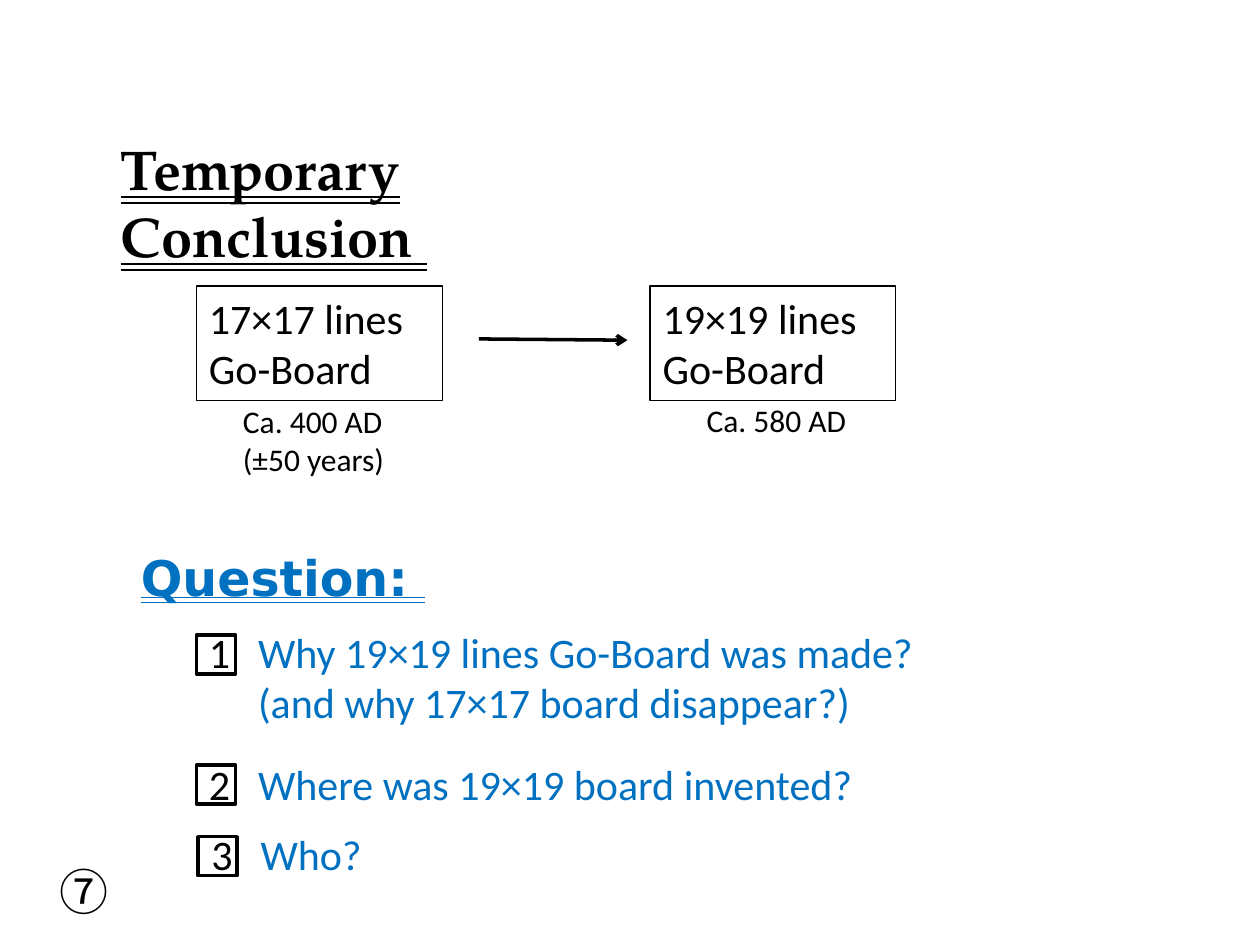
from dataclasses import dataclass

from lxml.etree import SubElement
from pptx import Presentation
from pptx.dml.color import RGBColor
from pptx.enum.shapes import MSO_CONNECTOR, MSO_SHAPE
from pptx.enum.text import MSO_ANCHOR, MSO_UNDERLINE, PP_ALIGN
from pptx.oxml.ns import qn
from pptx.util import Inches, Pt

COLORS = {"ink": "000000", "question": "0070C0"}
COLS, ROWS = 100, 75

prs = Presentation()
prs.slide_width, prs.slide_height = Inches(10), Inches(7.5)
s = prs.slides.add_slide(prs.slide_layouts[6])


@dataclass(frozen=True)
class Style:
    size: float
    font: str = "Calibri"
    color: str = "ink"
    heading: bool = False


@dataclass(frozen=True)
class Box:
    col: float
    row: float
    cols: float
    rows: float


@dataclass(frozen=True)
class Board:
    col: float
    lines: str
    date_box: Box
    dates: tuple[str, ...]


@dataclass(frozen=True)
class Question:
    number: str
    col: float
    row: float
    mark_col: float
    mark_row: float
    lines: tuple[str, ...]


TITLE = Style(32, "TeX Gyre Pagella", heading=True)
SUBTITLE = Style(28, "DejaVu Sans", "question", True)
PAGE = Style(28, "Noto Sans CJK JP")
BODY = Style(24)
ASK = Style(24, color="question")
DATE = Style(18)

BOARDS = (
    Board(15.6, "17×17 lines", Box(18.3, 31.4, 15.3, 7.1), ("Ca. 400 AD", "(±50 years)")),
    Board(51.6, "19×19 lines", Box(55.1, 31.3, 15.3, 4), ("Ca. 580 AD",)),
)
QUESTIONS = (
    Question("1", 14.8, 49.2, 15.6, 50.4,
             ("Why 19×19 lines Go-Board was made?", "(and why 17×17 board disappear?)")),
    Question("2", 14.8, 59.7, 15.6, 60.7, ("Where was 19×19 board invented?",)),
    Question("3", 15, 65.3, 15.7, 66.4, ("Who?",)),
)


def x(cols: float) -> int:
    return int(prs.slide_width * cols / COLS)


def y(rows: float) -> int:
    return int(prs.slide_height * rows / ROWS)


def place(box: Box) -> tuple[int, int, int, int]:
    return x(box.col), y(box.row), x(box.cols), y(box.rows)


def rgb(name: str) -> RGBColor:
    return RGBColor.from_string(COLORS[name])


def add_run(p, text: str, style: Style) -> None:
    r = p.add_run()
    r.text = text
    r.font.size = Pt(style.size)
    r.font.name = style.font
    r.font.color.rgb = rgb(style.color)
    if style.heading:
        r.font.bold = True
        r.font.underline = MSO_UNDERLINE.DOUBLE_LINE
    rPr = r._r.get_or_add_rPr()
    SubElement(rPr, qn("a:ea")).set("typeface", style.font)


def paragraphs(sp, count: int) -> list:
    tf = sp.text_frame
    tf.word_wrap = True
    tf.vertical_anchor = MSO_ANCHOR.TOP
    ps = [tf.paragraphs[0]] + [tf.add_paragraph() for _ in range(count - 1)]
    for p in ps:
        p.alignment = PP_ALIGN.LEFT
    return ps


def write(sp, lines: tuple[str, ...], style: Style) -> None:
    for p, line in zip(paragraphs(sp, len(lines)), lines):
        add_run(p, line, style)


def add_text(box: Box, lines: tuple[str, ...], style: Style) -> None:
    write(s.shapes.add_textbox(*place(box)), lines, style)


def add_frame(box: Box, weight: float):
    sp = s.shapes.add_shape(MSO_SHAPE.RECTANGLE, *place(box))
    sp.shadow.inherit = False
    sp.fill.background()
    sp.line.color.rgb = rgb("ink")
    sp.line.width = Pt(weight)
    return sp


def add_board(board: Board) -> None:
    sp = add_frame(Box(board.col, 22.7, 19.5, 9.1), 0.75)
    write(sp, (board.lines, "Go-Board"), BODY)
    add_text(board.date_box, board.dates, DATE)


def add_arrow(col: float, row: float, end_col: float, end_row: float) -> None:
    ln = s.shapes.add_connector(MSO_CONNECTOR.STRAIGHT, x(col), y(row), x(end_col), y(end_row))
    ln.line.color.rgb = rgb("ink")
    ln.line.width = Pt(2)
    SubElement(ln.line._get_or_add_ln(), qn("a:tailEnd")).set("type", "arrow")
    SubElement(ln._element.spPr, qn("a:effectLst"))


def add_question(q: Question) -> None:
    count = len(q.lines)
    sp = s.shapes.add_textbox(*place(Box(q.col, q.row, 63.3, 1 + 4 * count)))
    for i, (p, line) in enumerate(zip(paragraphs(sp, count), q.lines)):
        pPr = p._p.get_or_add_pPr()
        pPr.set("marL", str(x(4.7)))
        pPr.set("indent", str(0 if i else -x(3.9)))
        if i == 0:
            add_run(p, q.number, BODY)
            add_run(p, "\t", ASK)
        add_run(p, line, ASK)
    add_frame(Box(q.mark_col, q.mark_row, 3.1, 3.1), 2)


add_text(Box(3.7, 67.9, 7.8, 5.7), ("⑦",), PAGE)
add_text(Box(8.6, 10.2, 48.4, 6.4), ("Temporary Conclusion ",), TITLE)
for board in BOARDS:
    add_board(board)
add_arrow(38, 26.9, 49.8, 27)
add_text(Box(10.2, 43, 28.1, 5.7), ("Question: ",), SUBTITLE)
for question in QUESTIONS:
    add_question(question)

prs.save("out.pptx")
